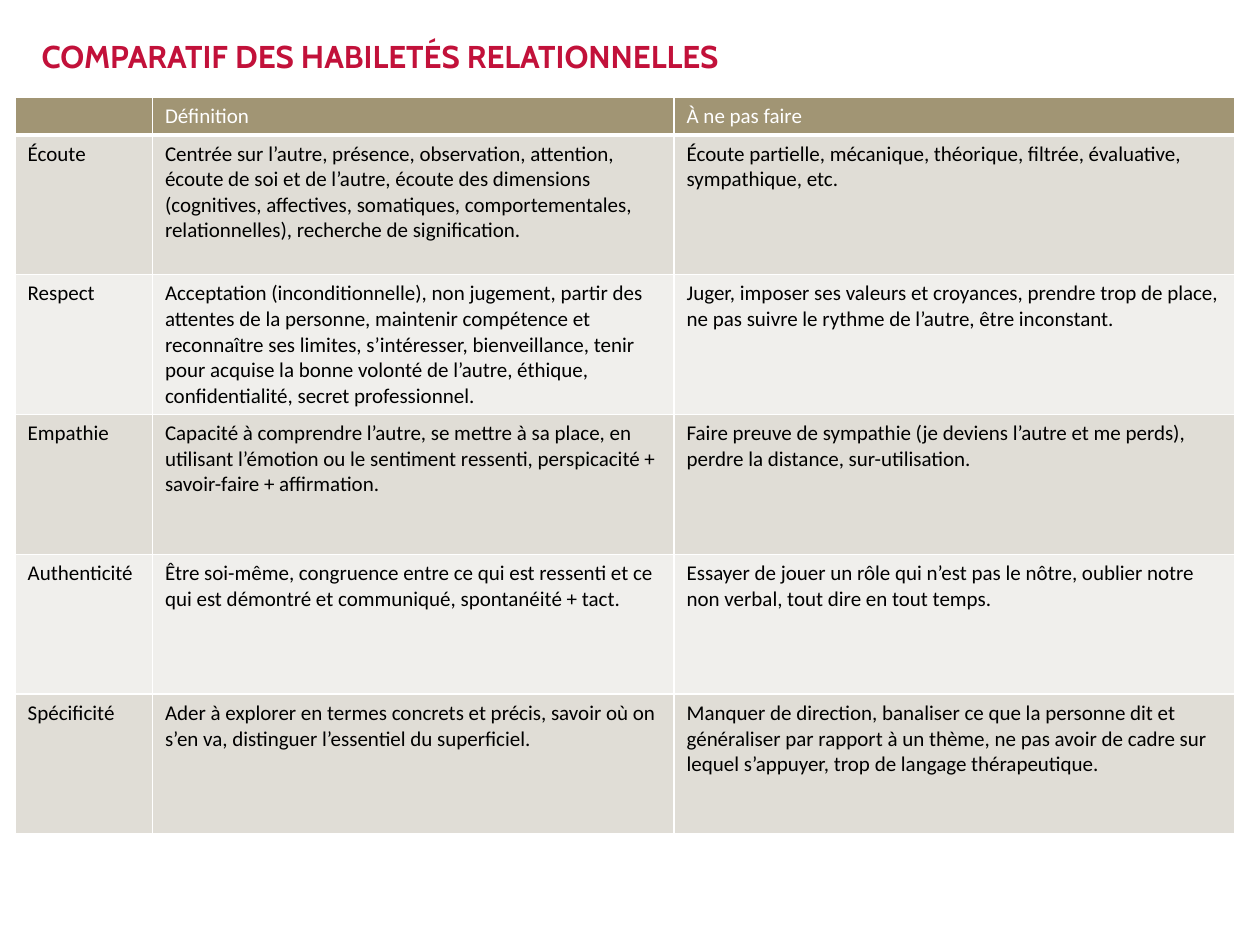
from dataclasses import dataclass

from lxml.etree import SubElement as Sub
from pptx import Presentation
from pptx.dml.color import RGBColor as RGB
from pptx.enum.text import MSO_ANCHOR as Anchor
from pptx.oxml.ns import qn
from pptx.util import Inches, Pt


@dataclass(frozen=True)
class Theme:
    title_font: str = "Cabin"
    body_font: str = "Calibri"
    title_size: int = 18
    body_size: int = 12
    title: str = "C2113A"
    header: str = "A19574"
    bands: tuple = ("E0DDD6", "F0EFEC")
    white: str = "FFFFFF"
    black: str = "000000"
    thin: int = 1
    thick: int = 3


THEME = Theme()

# Table grid, in inches
LEFT, TOP = 0.12, 0.77
COLS = (1.09, 4.14, 4.45)
HEADER_H, ROW_H = 0.3, 1.11

TITLE = "COMPARATIF DES HABILETÉS RELATIONNELLES"
HEADER = ("", "Définition", "À ne pas faire")
SKILLS = (
    ("Écoute",
     "Centrée sur l’autre, présence, observation, attention, écoute de soi et de "
     "l’autre, écoute des dimensions (cognitives, affectives, somatiques, "
     "comportementales, relationnelles), recherche de signification.",
     "Écoute partielle, mécanique, théorique, filtrée, évaluative, sympathique, etc."),
    ("Respect",
     "Acceptation (inconditionnelle), non jugement, partir des attentes de la "
     "personne, maintenir compétence et reconnaître ses limites, s’intéresser, "
     "bienveillance, tenir pour acquise la bonne volonté de l’autre, éthique, "
     "confidentialité, secret professionnel.",
     "Juger, imposer ses valeurs et croyances, prendre trop de place, ne pas suivre "
     "le rythme de l’autre, être inconstant."),
    ("Empathie",
     "Capacité à comprendre l’autre, se mettre à sa place, en utilisant l’émotion ou "
     "le sentiment ressenti, perspicacité + savoir-faire + affirmation.",
     "Faire preuve de sympathie (je deviens l’autre et me perds), perdre la "
     "distance, sur-utilisation."),
    ("Authenticité",
     "Être soi-même, congruence entre ce qui est ressenti et ce qui est démontré et "
     "communiqué, spontanéité + tact.",
     "Essayer de jouer un rôle qui n’est pas le nôtre, oublier notre non verbal, "
     "tout dire en tout temps."),
    ("Spécificité",
     "Ader à explorer en termes concrets et précis, savoir où on s’en va, distinguer "
     "l’essentiel du superficiel.",
     "Manquer de direction, banaliser ce que la personne dit et généraliser par "
     "rapport à un thème, ne pas avoir de cadre sur lequel s’appuyer, trop de "
     "langage thérapeutique."),
)


def add_run(p, text, font, size, color, bold=False):
    r = p.add_run()
    r.text = text
    r.font.name, r.font.size, r.font.bold = font, Pt(size), bold
    r.font.color.rgb = RGB.from_string(color)


def add_title(s, prs):
    w, h = prs.slide_width, prs.slide_height
    margin = Inches(0.33)
    tf = s.shapes.add_textbox(margin, Inches(0.29), w - 2 * margin, int(h * 0.1)).text_frame
    tf.word_wrap = True
    tf.vertical_anchor = Anchor.TOP
    tf.margin_left = tf.margin_top = tf.margin_right = tf.margin_bottom = 0
    add_run(tf.paragraphs[0], TITLE, THEME.title_font, THEME.title_size, THEME.title, True)


def set_borders(cell, top, bottom):
    tc_pr = cell._tc.get_or_add_tcPr()
    widths = {"a:lnL": THEME.thin, "a:lnR": THEME.thin, "a:lnT": top, "a:lnB": bottom}
    for tag, width in widths.items():
        ln = Sub(tc_pr, qn(tag), w=str(Pt(width)))
        Sub(Sub(ln, qn("a:solidFill")), qn("a:srgbClr"), val=THEME.white)


def fill_cell(cell, text, row):
    # The thick rule separates the header from the body
    set_borders(cell,
                top=THEME.thick if row == 1 else THEME.thin,
                bottom=THEME.thick if row == 0 else THEME.thin)
    color = THEME.bands[(row - 1) % 2] if row else THEME.header
    cell.fill.solid()
    cell.fill.fore_color.rgb = RGB.from_string(color)
    p = cell.text_frame.paragraphs[0]
    p.font.size = Pt(THEME.body_size)
    if text:
        add_run(p, text, THEME.body_font, THEME.body_size,
                THEME.black if row else THEME.white)


def add_skills_table(s):
    rows = (HEADER, *SKILLS)
    heights = [HEADER_H] + [ROW_H] * len(SKILLS)
    table = s.shapes.add_table(len(rows), len(COLS), Inches(LEFT), Inches(TOP),
                               Inches(sum(COLS)), Inches(sum(heights))).table
    for column, width in zip(table.columns, COLS):
        column.width = Inches(width)
    for i, (texts, height) in enumerate(zip(rows, heights)):
        table.rows[i].height = Inches(height)
        for j, text in enumerate(texts):
            fill_cell(table.cell(i, j), text, i)


def main():
    prs = Presentation()
    prs.slide_width, prs.slide_height = Inches(10), Inches(7.5)
    s = prs.slides.add_slide(prs.slide_layouts[6])
    add_title(s, prs)
    add_skills_table(s)
    prs.save("out.pptx")


if __name__ == "__main__":
    main()
